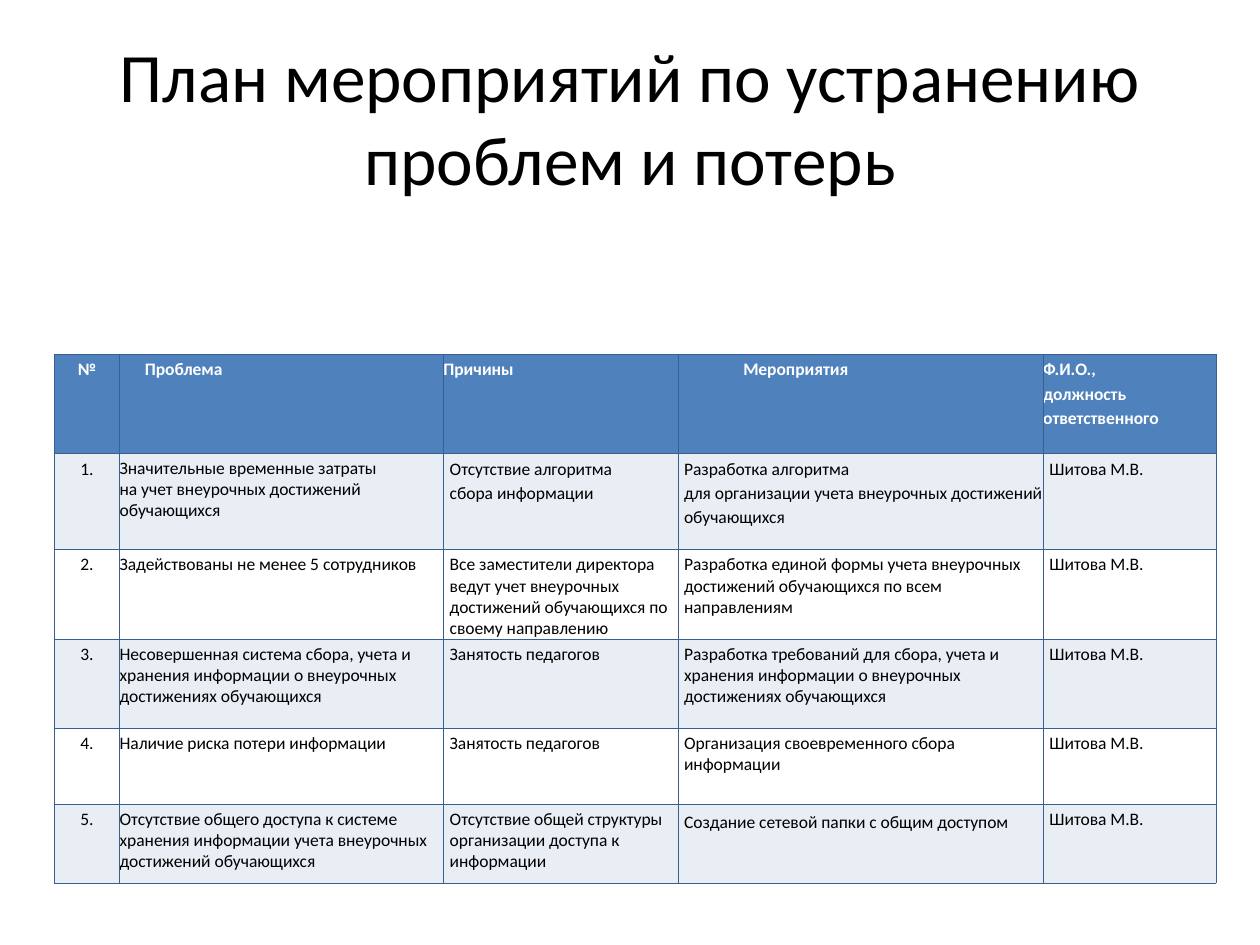
import pptx
import pptx.util
import pptx.dml.color
import pptx.enum.text
import pptx.oxml
import pptx.oxml.ns

Inches, Pt = pptx.util.Inches, pptx.util.Pt
Align = pptx.enum.text.PP_ALIGN

THEME = {
    "font": "Calibri", "title": 39.6, "body": 10,
    "text": "000000", "light": "FFFFFF", "head": "4F81BD",
    "band": "E9EDF4", "plain": "FFFFFF", "rule": "376092",
}

TITLE = "План мероприятий по устранению проблем и потерь"
OWNER = "Шитова М.В."

# "\n" starts a paragraph, "\v" breaks a line
HEAD = ["№", "Проблема", "Причины", "Мероприятия",
        "Ф.И.О.,\nдолжность\nответственного"]
ROWS = [
    ["Значительные временные затраты\vна учет внеурочных достижений обучающихся",
     "Отсутствие алгоритма\nсбора информации",
     "Разработка алгоритма\nдля организации учета внеурочных достижений обучающихся"],
    ["Задействованы не менее 5 сотрудников",
     "Все заместители директора ведут учет внеурочных достижений обучающихся "
     "по своему направлению",
     "Разработка единой формы учета внеурочных достижений обучающихся "
     "по всем направлениям"],
    ["Несовершенная система сбора, учета и хранения информации "
     "о внеурочных достижениях обучающихся",
     "Занятость педагогов",
     "Разработка требований для сбора, учета и хранения информации "
     "о внеурочных достижениях обучающихся"],
    ["Наличие риска потери информации",
     "Занятость педагогов",
     "Организация своевременного сбора\vинформации"],
    ["Отсутствие общего доступа к системе хранения информации учета "
     "внеурочных достижений обучающихся",
     "Отсутствие общей структуры организации доступа к информации",
     "Создание сетевой папки с общим доступом"],
]

WIDTHS = [0.52, 2.57, 1.86, 2.9, 1.37]
HEIGHTS = [0.79, 0.76, 0.71, 0.71, 0.6, 0.63]
HEAD_PADS = [0, 0.2, 0, 0.52, 0]
BODY_PADS = [0, 0, 0.05, 0.05, 0.05]
# Line spacing by (row, column): of the first paragraph, of the rest
FIRST = {(1, 1): Pt(12), (5, 3): 1.15}
REST = {(0, 4): 1.15, (1, 3): 1.14}


def color(key):
    return pptx.dml.color.RGBColor.from_string(THEME[key])


def style(para, size, key, align, bold=False):
    para.alignment = align
    font = para.font
    font.name, font.size, font.bold = THEME["font"], Pt(THEME[size]), bold
    font.color.rgb = color(key)


def border(cell):
    props = cell._tc.get_or_add_tcPr()
    for spot, side in enumerate("LRTB"):
        props.insert(spot, pptx.oxml.parse_xml(
            f'<a:ln{side} {pptx.oxml.ns.nsdecls("a")} w="{Pt(0.25)}">'
            f'<a:solidFill><a:srgbClr val="{THEME["rule"]}"/></a:solidFill>'
            f'</a:ln{side}>'))


def add_title(slide):
    box = slide.shapes.add_textbox(Inches(0.5), Inches(0.3), Inches(9), Inches(1.25))
    frame = box.text_frame
    frame.word_wrap = True
    frame.vertical_anchor = pptx.enum.text.MSO_ANCHOR.MIDDLE
    frame.text = TITLE
    style(frame.paragraphs[0], "title", "text", Align.CENTER)


def fill_cell(cell, text, row, col):
    head = row == 0
    cell.fill.solid()
    cell.fill.fore_color.rgb = color("head" if head else "band" if row % 2 else "plain")
    border(cell)
    cell.margin_left = Inches((HEAD_PADS if head else BODY_PADS)[col])
    cell.margin_top = Inches(0.04)
    cell.margin_right = cell.margin_bottom = 0
    cell.text = text
    for rank, para in enumerate(cell.text_frame.paragraphs):
        spacing = (REST if rank else FIRST).get((row, col))
        if spacing:
            para.line_spacing = spacing
        elif rank:
            para.space_before = Pt(1.9)
        style(para, "body", "light" if head else "text",
              Align.LEFT if col else Align.CENTER, head)


def add_plan(slide):
    rows = [HEAD] + [[f"{num}.", *row, OWNER] for num, row in enumerate(ROWS, 1)]
    table = slide.shapes.add_table(
        len(rows), len(WIDTHS), Inches(0.43), Inches(2.81),
        Inches(sum(WIDTHS)), Inches(sum(HEIGHTS))).table
    for col, width in zip(table.columns, WIDTHS):
        col.width = Inches(width)
    for row, height in zip(table.rows, HEIGHTS):
        row.height = Inches(height)
    for row, texts in enumerate(rows):
        for col, text in enumerate(texts):
            fill_cell(table.cell(row, col), text, row, col)


def main():
    deck = pptx.Presentation()
    deck.slide_width, deck.slide_height = Inches(10), Inches(7.5)
    slide = deck.slides.add_slide(deck.slide_layouts[6])
    add_title(slide)
    add_plan(slide)
    deck.save("out.pptx")


if __name__ == "__main__":
    main()
